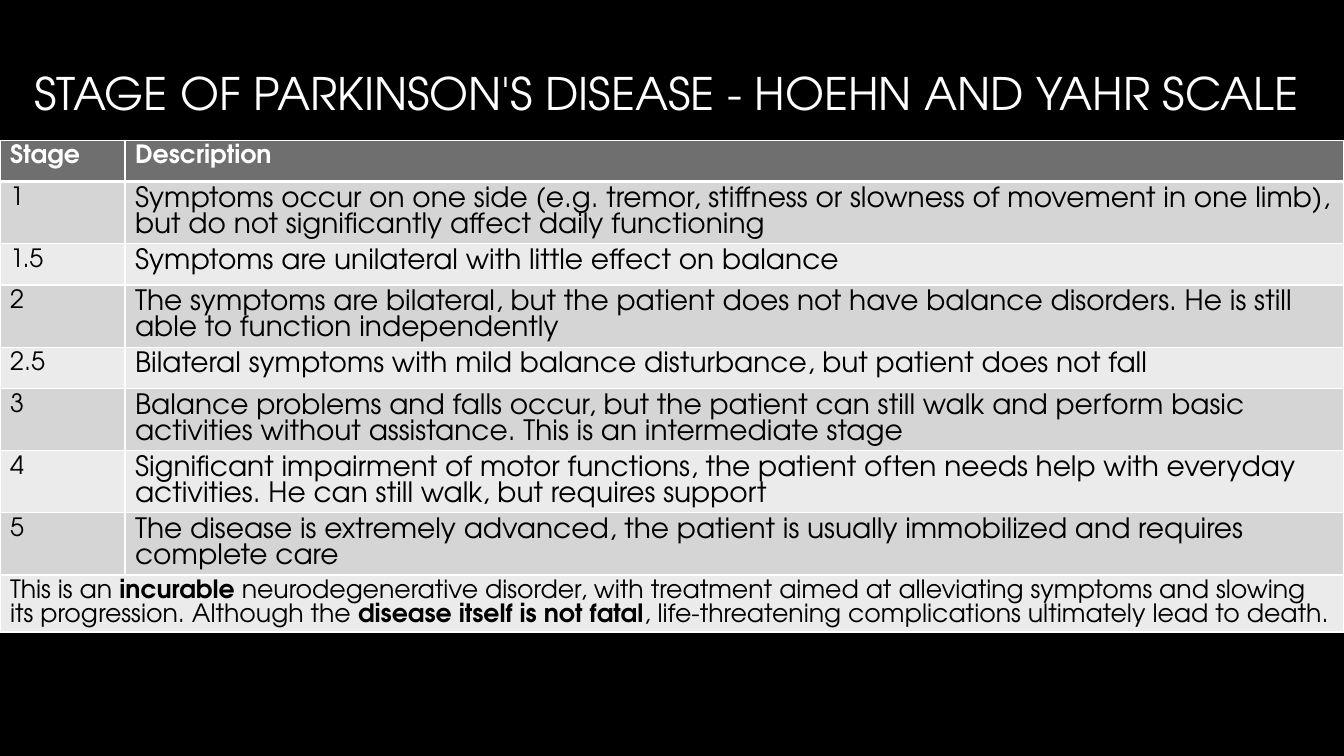
from dataclasses import dataclass
from lxml.etree import SubElement
from pptx import Presentation
from pptx.dml.color import RGBColor
from pptx.enum.text import MSO_ANCHOR
from pptx.oxml.ns import qn
from pptx.util import Inches, Pt

TITLE = "STAGE OF PARKINSON'S DISEASE - HOEHN AND YAHR SCALE"
HEADER = ("Stage", "Description")
STAGES = [
    ("1", "Symptoms occur on one side (e.g. tremor, stiffness or slowness of movement in one limb), "
          "but do not significantly affect daily functioning"),
    ("1.5", "Symptoms are unilateral with little effect on balance"),
    ("2", "The symptoms are bilateral, but the patient does not have balance disorders. "
          "He is still able to function independently"),
    ("2.5", "Bilateral symptoms with mild balance disturbance, but patient does not fall"),
    ("3", "Balance problems and falls occur, but the patient can still walk and perform basic "
          "activities without assistance. This is an intermediate stage"),
    ("4", "Significant impairment of motor functions, the patient often needs help with everyday "
          "activities. He can still walk, but requires support"),
    ("5", "The disease is extremely advanced, the patient is usually immobilized and requires complete care"),
]
SUMMARY = [
    ("This is an ", False),
    ("incurable", True),
    (" neurodegenerative disorder, with treatment aimed at alleviating symptoms and slowing "
     "its progression. Although the ", False),
    ("disease itself is not fatal", True),
    (", life-threatening complications ultimately lead to death.", False),
]


@dataclass(frozen=True)
class Theme:
    font: str = "TeX Gyre Adventor"
    black: str = "000000"
    white: str = "FFFFFF"
    header: str = "6F6F6F"
    bands: tuple = ("D5D5D5", "EBEBEB")
    title_size: int = 32
    label_size: int = 18
    text_size: int = 20
    leading: float = 0.93
    thin: int = 1
    thick: int = 3


T = Theme()
WIDTH, HEIGHT = 13.33, 7.5
TITLE_BOX = (0.24, 0.28, WIDTH - 0.24, 1.28)
TABLE_TOP, STAGE_COL, ROW = 1.39, 1.24, 0.41


def add_run(p, text, size, color, bold=False):
    r = p.add_run()
    r.text = text
    r.font.name = T.font
    r.font.size = Pt(size)
    r.font.bold = bold
    r.font.color.rgb = RGBColor.from_string(color)


def fill_cell(cell, runs, size, color):
    p = cell.text_frame.paragraphs[0]
    p.line_spacing = Pt(size * T.leading)
    for text, bold in runs:
        add_run(p, text, size, color, bold)


def style_cell(cell, fill, bottom):
    pr = cell._tc.get_or_add_tcPr()
    for side in ("L", "R", "T", "B"):
        width = bottom if side == "B" else T.thin
        ln = SubElement(pr, qn(f"a:ln{side}"), w=str(Pt(width)))
        SubElement(SubElement(ln, qn("a:solidFill")), qn("a:srgbClr"), val=T.white)
    cell.fill.solid()
    cell.fill.fore_color.rgb = RGBColor.from_string(fill)


def add_title(s):
    tf = s.shapes.add_textbox(*map(Inches, TITLE_BOX)).text_frame
    tf.word_wrap = True
    tf.vertical_anchor = MSO_ANCHOR.MIDDLE
    add_run(tf.paragraphs[0], TITLE, T.title_size, T.white)


def add_stage_table(s):
    rows = [HEADER, *STAGES]
    count = len(rows) + 1
    table = s.shapes.add_table(count, 2, 0, Inches(TABLE_TOP), Inches(WIDTH), Inches(ROW * count)).table
    table.columns[0].width = Inches(STAGE_COL)
    table.columns[1].width = Inches(WIDTH - STAGE_COL)
    for i in range(count):
        fill = T.bands[(i - 1) % 2] if i else T.header
        for cell in table.rows[i].cells:
            style_cell(cell, fill, T.thin if i else T.thick)
    for i, row in enumerate(rows):
        for j, text in enumerate(row):
            size = T.text_size if i and j else T.label_size
            fill_cell(table.cell(i, j), [(text, i == 0)], size, T.black if i else T.white)
    summary = table.cell(count - 1, 0)
    summary.merge(table.cell(count - 1, 1))
    fill_cell(summary, SUMMARY, T.label_size, T.black)


def main():
    prs = Presentation()
    prs.slide_width, prs.slide_height = Inches(WIDTH), Inches(HEIGHT)
    s = prs.slides.add_slide(prs.slide_layouts[6])
    s.background.fill.solid()
    s.background.fill.fore_color.rgb = RGBColor.from_string(T.black)
    add_title(s)
    add_stage_table(s)
    prs.save("out.pptx")


if __name__ == "__main__":
    main()
